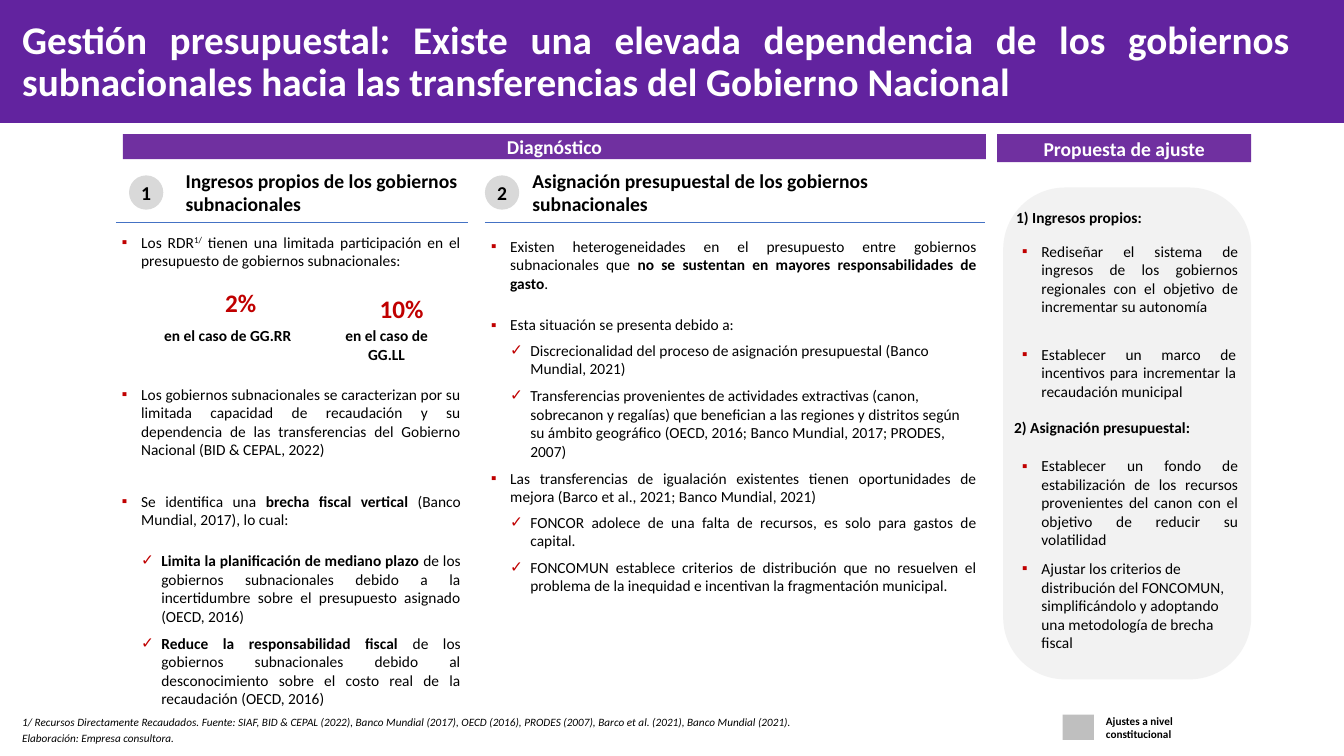
from dataclasses import dataclass

from lxml import etree
from pptx import Presentation
from pptx import util as u
from pptx.dml.color import RGBColor
from pptx.enum import shapes, text
from pptx.oxml import ns

LEFT, CENTER, RIGHT, JUSTIFY = (text.PP_ALIGN.LEFT, text.PP_ALIGN.CENTER,
                                text.PP_ALIGN.RIGHT, text.PP_ALIGN.JUSTIFY)
TOP, MIDDLE = text.MSO_ANCHOR.TOP, text.MSO_ANCHOR.MIDDLE
RECT, OVAL, ROUND = (shapes.MSO_SHAPE.RECTANGLE, shapes.MSO_SHAPE.OVAL,
                     shapes.MSO_SHAPE.ROUNDED_RECTANGLE)


@dataclass(frozen=True)
class Theme:
    font: str = "Calibri"
    banner: str = "62239F"
    header: str = "7030A0"
    accent: str = "C00000"
    rule: str = "4472C4"
    badge: str = "D9D9D9"
    panel: str = "F2F2F2"
    legend: str = "BFBFBF"
    dark: str = "000000"
    light: str = "FFFFFF"
    title: int = 28
    figure: int = 18
    heading: int = 14
    body: int = 11
    note: int = 8


T = Theme()
BULLETS = [("▪", 0.19, 0.19), ("✓", 0.39, 0.2)]


def set_all(target, values):
    for name, value in values.items():
        setattr(target, name, value)


def place(sp, box):
    set_all(sp, dict(zip(("left", "top", "width", "height"), map(u.Inches, box))))
    return sp


def frame(sp, anchor=TOP, margins=(0.1, 0.05, 0.1, 0.05)):
    tf = sp.text_frame
    names = ("margin_left", "margin_top", "margin_right", "margin_bottom")
    set_all(tf, {"word_wrap": True, "auto_size": text.MSO_AUTO_SIZE.NONE,
                 "vertical_anchor": anchor, **dict(zip(names, map(u.Inches, margins)))})
    return tf


def write(p, content, size=T.body, color=T.dark, bold=False, italic=False,
          align=LEFT, before=0, after=0, spacing=1.0):
    set_all(p, {"alignment": align, "line_spacing": spacing,
                "space_before": u.Pt(before), "space_after": u.Pt(after)})
    runs = [(content, "")] if isinstance(content, str) else content
    for words, style in runs:
        r = p.add_run()
        r.text = words
        set_all(r.font, {"name": T.font, "size": u.Pt(size),
                         "bold": bold or style == "bold", "italic": italic})
        r.font.color.rgb = RGBColor.from_string(color)
        if style == "super":
            r.font._element.set("baseline", "30000")


def bullet(p, level):
    char, indent, hang = BULLETS[level]
    p.level = level
    pPr = p._p.get_or_add_pPr()
    pPr.set("marL", str(u.Inches(indent)))
    pPr.set("indent", str(-u.Inches(hang)))
    color = etree.SubElement(pPr, ns.qn("a:buClr"))
    etree.SubElement(color, ns.qn("a:srgbClr"), val=T.accent)
    etree.SubElement(pPr, ns.qn("a:buFont"), typeface=T.font)
    etree.SubElement(pPr, ns.qn("a:buChar"), char=char)


def textbox(parent, box):
    return parent.shapes.add_textbox(*map(u.Inches, box))


def label(sp, words, anchor=TOP, **style):
    write(frame(sp, anchor).paragraphs[0], words, **style)


def bullet_list(sp, items, margins):
    tf = frame(sp, margins=margins)
    for i, (level, content, after, align) in enumerate(items):
        p = tf.add_paragraph() if i else tf.paragraphs[0]
        write(p, content, after=after, align=align)
        bullet(p, level)


def block(parent, kind, box, fill, words="", color=T.dark):
    sp = parent.shapes.add_shape(kind, *map(u.Inches, box))
    sp.shadow.inherit = False
    sp.fill.solid()
    sp.fill.fore_color.rgb = RGBColor.from_string(fill)
    sp.line.fill.background()
    if words:
        tf = frame(sp, MIDDLE, (0, 0, 0, 0))
        write(tf.paragraphs[0], words, T.heading, color, True, align=CENTER)
    return sp


def rule(s, x1, x2, y):
    line = s.shapes.add_connector(shapes.MSO_CONNECTOR.STRAIGHT,
                                  *map(u.Inches, (x1, y, x2, y)))
    line.line.color.rgb = RGBColor.from_string(T.rule)
    line.line.width = u.Pt(0.5)
    etree.SubElement(line._element.spPr, ns.qn("a:effectLst"))


def banner(s):
    block(s, RECT, (0, 0, 13.33, 1.22), T.banner)
    title = place(s.shapes.title, (0.22, 0.35, 12.67, 0.54))
    s.shapes._spTree.append(title._element)
    tf = frame(title, MIDDLE, (0, 0.05, 0.1, 0.05))
    write(tf.paragraphs[0], "Gestión presupuestal: Existe una elevada dependencia de los gobiernos "
          "subnacionales hacia las transferencias del Gobierno Nacional",
          T.title, T.light, True, align=JUSTIFY, spacing=0.9)


def column_heads(s):
    block(s, RECT, (1.22, 1.33, 8.56, 0.25), T.header, "Diagnóstico", T.light)
    block(s, RECT, (9.89, 1.33, 2.52, 0.28), T.header, "Propuesta de ajuste", T.light)
    heads = [("1", 1, 1.28, (1.74, 3.29), (1.15, 4.64), "Ingresos propios de los gobiernos subnacionales"),
             ("2", 3, 4.81, (5.18, 4.59), (4.81, 9.77), "Asignación presupuestal de los gobiernos subnacionales")]
    for number, idx, badge_x, (x, w), ends, words in heads:
        block(s, OVAL, (badge_x, 1.74, 0.34, 0.34), T.badge, number)
        sp = place(s.placeholders[idx], (x, 1.63, w, 0.55))
        label(sp, words, MIDDLE, size=T.heading, bold=True)
        rule(s, *ends, 2.21)


def diagnosis(s):
    income = (1.13, 3.52)
    budget = (4.79, 4.98)
    lists = [
        (income, 2.23, 0.6, None, [
            (0, [("Los RDR", ""), ("1/", "super"),
                 (" tienen una limitada participación en el presupuesto de gobiernos subnacionales:", "")], 5, JUSTIFY)]),
        (income, 3.74, 1.06, None, [
            (0, "Los gobiernos subnacionales se caracterizan por su limitada capacidad de recaudación y su "
                "dependencia de las transferencias del Gobierno Nacional (BID & CEPAL, 2022)", 5, JUSTIFY)]),
        (income, 4.8, 2.03, 2, [
            (0, [("Se identifica una ", ""), ("brecha fiscal vertical ", "bold"),
                 ("(Banco Mundial, 2017), lo cual:", "")], 16, JUSTIFY),
            (1, [("Limita la planificación de mediano plazo ", "bold"),
                 ("de los gobiernos subnacionales debido a la incertidumbre sobre el presupuesto asignado (OECD, 2016)", "")], 6, JUSTIFY),
            (1, [("Reduce la responsabilidad fiscal ", "bold"),
                 ("de los gobiernos subnacionales debido al desconocimiento sobre el costo real de la recaudación (OECD, 2016)", "")], 6, JUSTIFY)]),
        (budget, 2.27, 0.78, None, [
            (0, [("Existen heterogeneidades en el presupuesto entre gobiernos subnacionales que ", ""),
                 ("no se sustentan en mayores responsabilidades de gasto", "bold"), (".", "")], 5, JUSTIFY)]),
        (budget, 3.05, 1.52, 4, [
            (0, "Esta situación se presenta debido a:", 5, JUSTIFY),
            (1, "Discrecionalidad del proceso de asignación presupuestal (Banco Mundial, 2021)", 6, LEFT),
            (1, "Transferencias provenientes de actividades extractivas (canon, sobrecanon y regalías) que benefician "
                "a las regiones y distritos según su ámbito geográfico (OECD, 2016; Banco Mundial, 2017; PRODES, 2007)", 6, LEFT)]),
        (budget, 4.57, 1.16, None, [
            (0, "Las transferencias de igualación existentes tienen oportunidades de mejora "
                "(Barco et al., 2021; Banco Mundial, 2021)", 5, JUSTIFY),
            (1, "FONCOR adolece de una falta de recursos, es solo para gastos de capital.", 6, JUSTIFY),
            (1, "FONCOMUN establece criterios de distribución que no resuelven el problema de la inequidad "
                "e incentivan la fragmentación municipal.", 6, JUSTIFY)]),
    ]
    for (x, w), y, h, idx, items in lists:
        box = (x, y, w, h)
        sp = place(s.placeholders[idx], box) if idx else textbox(s, box)
        bullet_list(sp, items, (0.08,) * 4)


def key_figures(s):
    for value, value_box, words, x, w in [
            ("2%", (1.89, 2.77, 0.75, 0.45), "en el caso de GG.RR", 1.49, 1.54),
            ("10%", (3.37, 2.83, 0.93, 0.45), "en el caso de GG.LL", 3.22, 1.23)]:
        label(textbox(s, value_box), value, MIDDLE, size=T.figure, color=T.accent, bold=True, align=RIGHT)
        label(textbox(s, (x, 3.19, w, 0.47)), words, bold=True, align=CENTER)


def proposals(s):
    panel = block(s, ROUND, (9.95, 1.86, 2.46, 4.88), T.panel)
    panel.adjustments[0] = 0.25
    label(textbox(s, (9.98, 2.02, 1.89, 0.29)), "1) Ingresos propios:", bold=True)
    label(textbox(s, (9.96, 4.1, 2.45, 0.38)), "2) Asignación presupuestal:", bold=True)
    for y, w, h, align, words in [
            (2.35, 2.34, 0.98, JUSTIFY, "Rediseñar el sistema de ingresos de los gobiernos regionales "
             "con el objetivo de incrementar su autonomía"),
            (3.37, 2.32, 0.69, JUSTIFY, "Establecer un marco de incentivos para incrementar la recaudación municipal"),
            (4.48, 2.34, 0.98, JUSTIFY, "Establecer un fondo de estabilización de los recursos provenientes "
             "del canon con el objetivo de reducir su volatilidad"),
            (5.5, 2.32, 1.06, LEFT, "Ajustar los criterios de distribución del FONCOMUN, simplificándolo "
             "y adoptando una metodología de brecha fiscal")]:
        bullet_list(textbox(s, (10.04, y, w, h)), [(0, words, 6, align)], (0.1, 0.05, 0.1, 0.05))


def footer(s):
    legend = s.shapes.add_group_shape()
    block(legend, RECT, (10.54, 7.09, 0.31, 0.25), T.legend)
    label(textbox(legend, (10.87, 7.09, 1.22, 0.25)), "Ajustes a nivel constitucional",
          MIDDLE, size=T.note, bold=True)
    tf = frame(textbox(s, (0.22, 7.05, 10.2, 0.38)), margins=(0, 0.05, 0, 0.05))
    source = ("1/ Recursos Directamente Recaudados. Fuente: SIAF, BID & CEPAL (2022), Banco Mundial (2017), "
              "OECD (2016), PRODES (2007), Barco et al. (2021), Banco Mundial (2021).")
    write(tf.paragraphs[0], source, T.note, italic=True, before=1.6)
    write(tf.add_paragraph(), "Elaboración: Empresa consultora.", T.note, italic=True, before=1.6)


def main():
    prs = Presentation()
    prs.slide_width, prs.slide_height = u.Inches(13.33), u.Inches(7.5)
    s = prs.slides.add_slide(prs.slide_layouts[4])
    for draw in (banner, column_heads, diagnosis, key_figures, proposals, footer):
        draw(s)
    prs.save("out.pptx")


if __name__ == "__main__":
    main()
